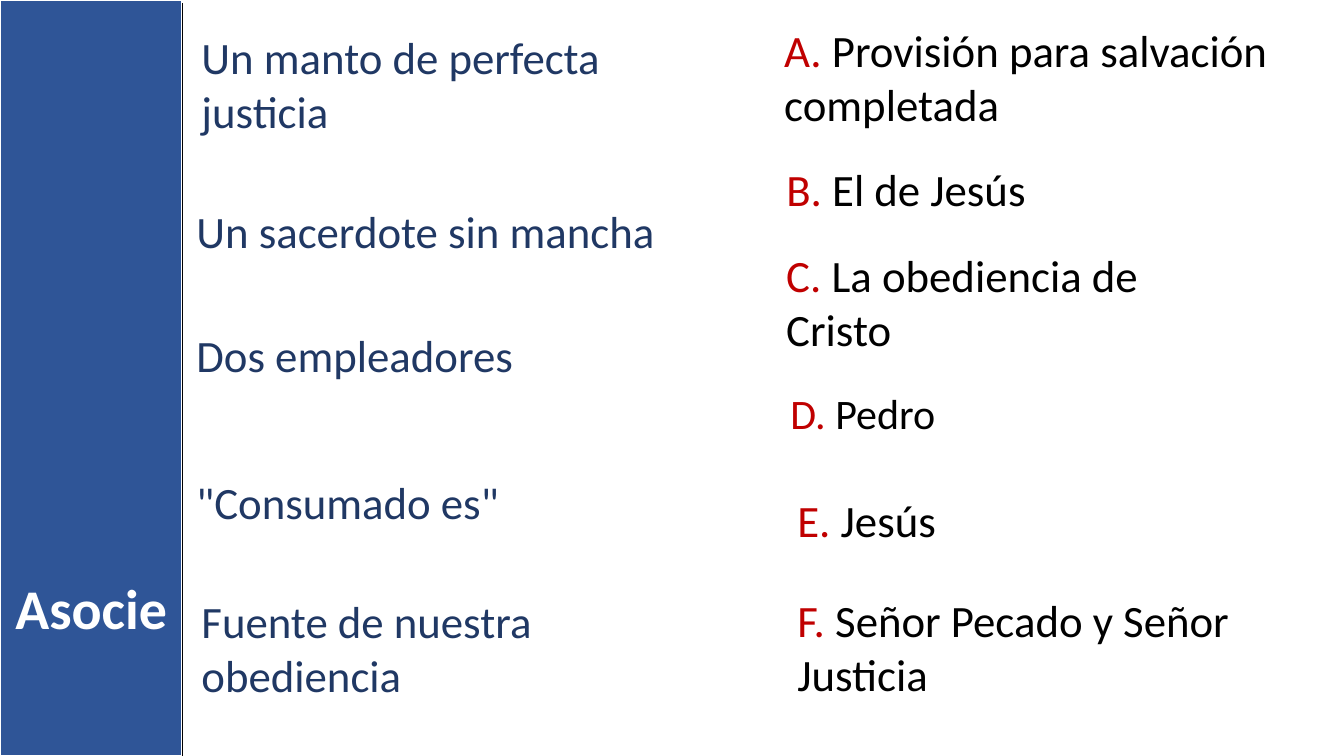
from pptx import Presentation
from pptx.dml.color import RGBColor
from pptx.enum.shapes import MSO_CONNECTOR, MSO_SHAPE
from pptx.enum.text import MSO_AUTO_SIZE, PP_ALIGN
from pptx.oxml.ns import qn
from pptx.util import Inches, Pt

RECTANGLE = MSO_SHAPE.RECTANGLE
STRAIGHT = MSO_CONNECTOR.STRAIGHT
FIT_SHAPE = MSO_AUTO_SIZE.SHAPE_TO_FIT_TEXT
CENTER = PP_ALIGN.CENTER

BLUE = RGBColor(0x2F, 0x55, 0x97)
NAVY = RGBColor(0x20, 0x38, 0x64)
RED = RGBColor(0xC0, 0x00, 0x00)
BLACK = RGBColor(0x00, 0x00, 0x00)
WHITE = RGBColor(0xFF, 0xFF, 0xFF)

# Content: lengths in inches, sizes in points
SLIDE_WIDTH, SLIDE_HEIGHT = 13.33, 7.5
BAND_WIDTH = 1.81
RULE_TOP = 0.03
FONT = "Calibri"
PROMPT_SIZE = 32
TITLE, TITLE_TOP, TITLE_SIZE = "Asocie", 5.64, 40

# text, left, top, width
PROMPTS = [
    ("Un manto de perfecta justicia", 1.9, 0.25, 5.39),
    ("Un sacerdote sin mancha", 1.85, 1.97, 5.16),
    ("Dos empleadores", 1.85, 3.2, 5.1),
    ('"Consumado es"', 1.85, 4.66, 4.94),
    ("Fuente de nuestra obediencia", 1.9, 5.84, 5.16),
]
# text, left, top, width, size; letters follow the order
ANSWERS = [
    ("Provisión para salvación completada", 7.68, 0.18, 5, 32),
    ("El de Jesús", 7.7, 1.55, 4.68, 32),
    ("La obediencia de Cristo", 7.7, 2.41, 4.73, 32),
    ("Pedro", 7.74, 3.8, 4.75, 30),
    ("Jesús", 7.81, 4.84, 4.91, 32),
    ("Señor Pecado y Señor Justicia", 7.81, 5.83, 4.62, 32),
]
TWO_LINE_FROM = 23  # texts this long take two lines in the answer column


def add_text(slide, runs, left, top, width, size, lines=1):
    """Add a wrapped text box from (text, colour) runs; return its paragraph."""
    height = 0.1 + lines * size / 60
    box = slide.shapes.add_textbox(
        Inches(left), Inches(top), Inches(width), Inches(height))
    frame = box.text_frame
    frame.word_wrap = True
    frame.auto_size = FIT_SHAPE
    paragraph = frame.paragraphs[0]
    paragraph.font.name = FONT
    paragraph.font.size = Pt(size)
    for text, color in runs:
        run = paragraph.add_run()
        run.text = text
        run.font.color.rgb = color
    return paragraph


def main():
    prs = Presentation()
    prs.slide_width = Inches(SLIDE_WIDTH)
    prs.slide_height = Inches(SLIDE_HEIGHT)
    slide = prs.slides.add_slide(prs.slide_layouts[6])

    # Side band
    band = slide.shapes.add_shape(
        RECTANGLE, 0, 0, Inches(BAND_WIDTH), Inches(SLIDE_HEIGHT))
    band.shadow.inherit = False
    band.fill.solid()
    band.fill.fore_color.rgb = BLUE
    band.line.color.rgb = WHITE
    band.line.width = Pt(1.5)

    # Prompts to match
    for text, left, top, width in PROMPTS:
        lines = 2 if len(text) > TWO_LINE_FROM else 1
        add_text(slide, [(text, NAVY)], left, top, width, PROMPT_SIZE, lines)

    # Lettered answers
    for letter, (text, left, top, width, size) in zip("ABCDEF", ANSWERS):
        lines = 2 if len(text) >= TWO_LINE_FROM else 1
        runs = [(f"{letter}. ", RED), (text, BLACK)]
        add_text(slide, runs, left, top, width, size, lines)

    # Title on the band
    title = add_text(
        slide, [(TITLE, WHITE)], 0, TITLE_TOP, BAND_WIDTH, TITLE_SIZE)
    title.alignment = CENTER
    title.font.bold = True

    # Rule along the band's edge
    rule = slide.shapes.add_connector(
        STRAIGHT, Inches(BAND_WIDTH), Inches(RULE_TOP),
        Inches(BAND_WIDTH), Inches(SLIDE_HEIGHT))
    rule.line.color.rgb = BLACK
    rule.line.width = Pt(1)
    properties = rule.element.find(qn("p:spPr"))
    properties.append(properties.makeelement(qn("a:effectLst"), {}))

    prs.save("out.pptx")


if __name__ == "__main__":
    main()
